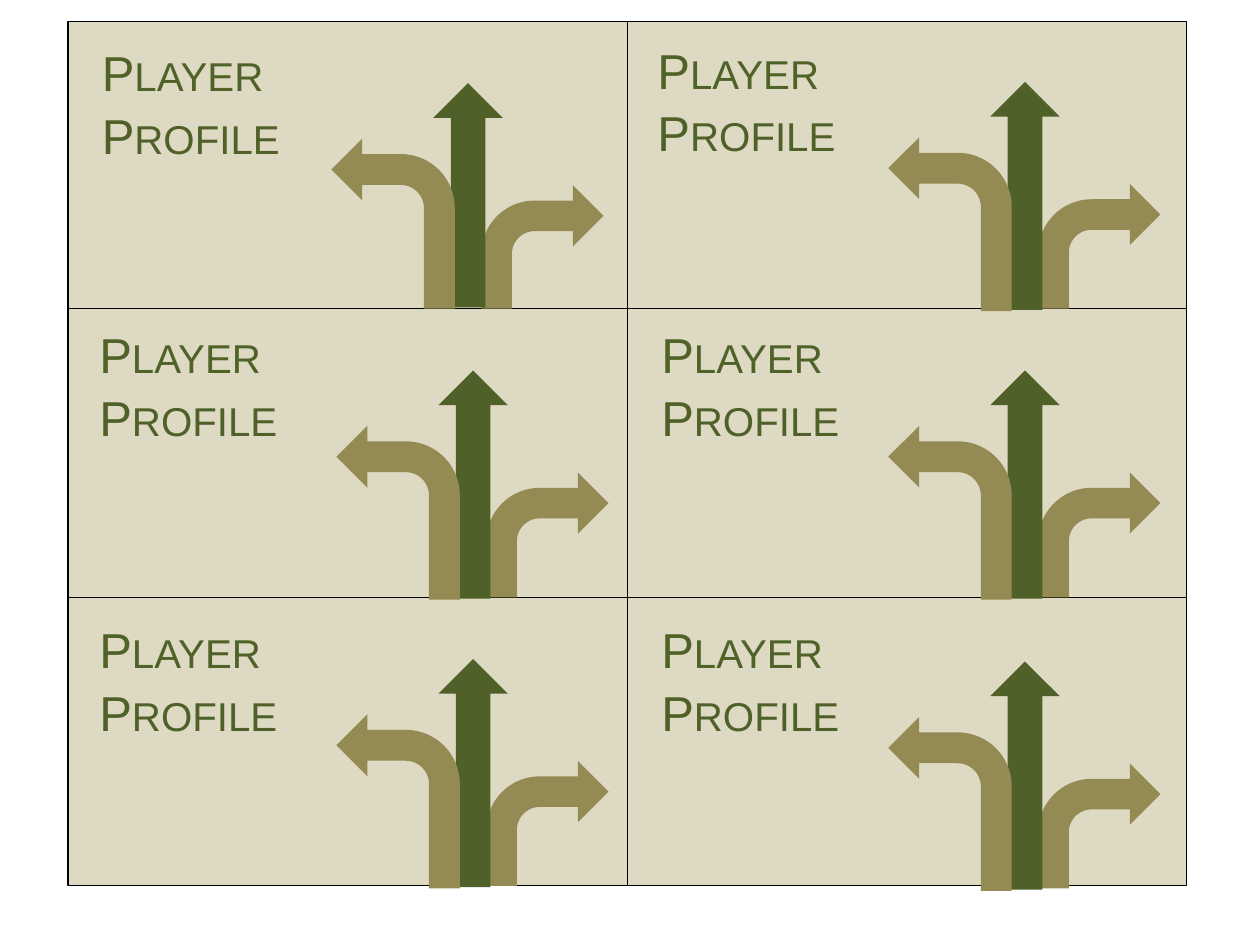
from dataclasses import dataclass

from pptx import Presentation
from pptx.dml.color import RGBColor
from pptx.enum.shapes import MSO_SHAPE
from pptx.util import Emu, Pt

RECT = MSO_SHAPE.RECTANGLE
UP_ARROW = MSO_SHAPE.UP_ARROW
BENT_ARROW = MSO_SHAPE.BENT_ARROW
PX = 9144


@dataclass(frozen=True)
class Theme:
    font: str = "Arial"
    card: str = "DDD9C3"
    border: str = "000000"
    trunk: str = "4F6128"
    branch: str = "948A54"
    heading: tuple = (("PLAYER", "4F6228"), ("PROFILE", "4F6128"))
    capital: int = 28
    small_capital: int = 23


THEME = Theme()
LEFTS = (54, 498)
ROWS = ((17, 228), (245, 229), (474, 229))
CARD_W = 444
BENDS = (0.25, 0.25, 0.25, 0.438)

CONTENTS = (
    {"label": (17, 12), "arrows": (290, 49), "trunk_h": 178},
    {"label": (14, 10), "arrows": (288, 48), "trunk_h": 181},
    {"label": (15, 8), "arrows": (294, 49), "trunk_h": 181},
    {"label": (17, 8), "arrows": (288, 49), "trunk_h": 181},
    {"label": (15, 13), "arrows": (294, 49), "trunk_h": 181},
    {"label": (17, 13), "arrows": (288, 51), "trunk_h": 181},
)


def emu(*lengths):
    return [Emu(v * PX) for v in lengths]


def add_filled(s, kind, box, color, adjustments=()):
    sp = s.shapes.add_shape(kind, *emu(*box))
    sp.shadow.inherit = False
    sp.fill.solid()
    sp.fill.fore_color.rgb = RGBColor.from_string(color)
    sp.line.fill.background()
    for i, value in enumerate(adjustments):
        sp.adjustments[i] = value
    return sp


def add_card(s, box):
    sp = add_filled(s, RECT, box, THEME.card)
    sp.line.color.rgb = RGBColor.from_string(THEME.border)
    sp.line.width = Pt(0.75)


def add_arrows(s, x, y, trunk_h):
    add_filled(s, BENT_ARROW, (x + 38, y + 81, 97, 99 if trunk_h > 180 else 98),
               THEME.branch, BENDS)
    add_filled(s, UP_ARROW, (x, y, 55, trunk_h), THEME.trunk, (0.5, 0.5))
    left = add_filled(s, BENT_ARROW, (x - 81, y + 44, 98, trunk_h - 43),
                      THEME.branch, BENDS)
    left._element.spPr.get_or_add_xfrm().set("flipH", "1")


def add_label(s, x, y):
    tf = s.shapes.add_textbox(*emu(x, y, 194, 118)).text_frame
    tf.word_wrap = True
    for i, (word, color) in enumerate(THEME.heading):
        p = tf.add_paragraph() if i else tf.paragraphs[0]
        p.space_before = Pt(2)
        for text, size in ((word[0], THEME.capital), (word[1:], THEME.small_capital)):
            r = p.add_run()
            r.text = text
            for name, value in {"name": THEME.font, "size": Pt(size)}.items():
                setattr(r.font, name, value)
            r.font.color.rgb = RGBColor.from_string(color)


def add_card_contents(s, box, label, arrows, trunk_h):
    x, y = box[:2]
    add_arrows(s, x + arrows[0], y + arrows[1], trunk_h)
    add_label(s, x + label[0], y + label[1])


def main():
    prs = Presentation()
    prs.slide_width, prs.slide_height = emu(1000, 750)
    s = prs.slides.add_slide(prs.slide_layouts[6])
    boxes = [(x, y, CARD_W, h) for y, h in ROWS for x in LEFTS]
    for box in boxes:
        add_card(s, box)
    for box, contents in zip(boxes, CONTENTS):
        add_card_contents(s, box, **contents)
    prs.save("out.pptx")


if __name__ == "__main__":
    main()
